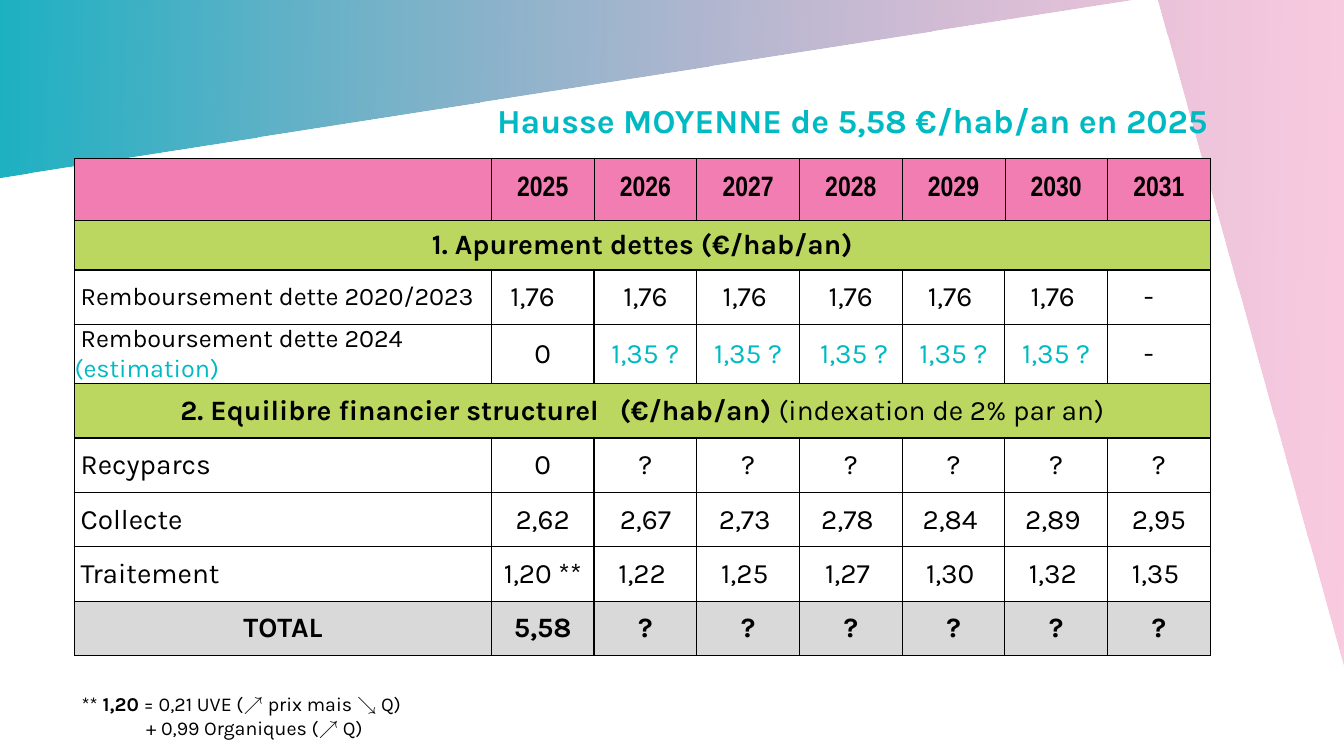
from dataclasses import dataclass

from lxml import etree
from pptx import Presentation
from pptx.dml.color import RGBColor
from pptx.enum.text import MSO_ANCHOR, PP_ALIGN
from pptx.oxml.ns import qn
from pptx.util import Inches, Pt

LEFT, CENTER = PP_ALIGN.LEFT, PP_ALIGN.CENTER
MIDDLE = MSO_ANCHOR.MIDDLE
SLIDE_WIDTH, SLIDE_HEIGHT = Inches(13.33), Inches(7.5)


@dataclass(frozen=True)
class Theme:
    """Colours, fonts and type sizes of the slide."""
    pink: str = "F27DB2"
    teal: str = "1DB2C3"
    accent: str = "00BAC3"
    green: str = "BCD75F"
    grey: str = "D9D9D9"
    black: str = "000000"
    body_font: str = "Karla"
    year_font: str = "Arial Narrow"
    title_size: int = 24
    value_size: int = 20
    label_size: int = 18
    note_size: int = 14


THEME = Theme()
YEARS = [str(year) for year in range(2025, 2032)]
DEBT_SECTION = [("1. Apurement dettes (€/hab/an)", True)]
BALANCE_SECTION = [("2. Equilibre financier structurel", True), (" ", True),
                   ("(€/hab/an) ", True), ("(indexation de 2% par an)", False)]
DEBT_ROWS = [
    ("Remboursement dette 2020/2023",
     ["1,76", "1,76", "1,76 ", "1,76", "1,76 ", "1,76 ", "-"]),
    ("Remboursement dette 2024 ",
     ["0", "1,35 ?", "1,35 ?", " 1,35 ?", "1,35 ?", "1,35 ?", "-"]),
]
BALANCE_ROWS = [
    ("Recyparcs", ["0"] + ["?"] * 6),
    ("Collecte", ["2,62", "2,67", "2,73 ", "2,78 ", "2,84 ", "2,89 ", "2,95"]),
    ("Traitement", ["1,20 **", "1,22 ", "1,25 ", "1,27 ", "1,30 ", "1,32 ", "1,35 "]),
]
TOTALS = ["TOTAL", "5,58"] + ["?"] * 6
ROW_HEIGHTS = [0.62, 0.49] + [0.54] * 7
COLUMN_WIDTHS = [4.14] + [1.02] * 7
LABEL_INDENT, VALUE_SHIFT = Inches(0.06), Inches(0.2)


def share_box(left, top, width, height):
    """Turn percentages of the slide's size into a box."""
    return (int(SLIDE_WIDTH * left / 100), int(SLIDE_HEIGHT * top / 100),
            int(SLIDE_WIDTH * width / 100), int(SLIDE_HEIGHT * height / 100))


def set_font(paragraph, size, bold=False, color=THEME.black, name=THEME.body_font):
    """Format a whole paragraph."""
    font = paragraph.font
    font.size, font.bold, font.name = Pt(size), bold, name
    font.color.rgb = RGBColor.from_string(color)


def add_backdrop(slide, box):
    """Draw the gradient band across the top and down the right side."""
    left, top, width, height = box
    right = left + width
    builder = slide.shapes.build_freeform(left, top)
    builder.add_line_segments([
        (left, top + int(height * 0.27)), (left + int(width * 0.86), top),
        (right, top + height), (right, top)])
    band = builder.convert_to_shape()
    band.shadow.inherit = False
    band.line.fill.background()
    band.fill.gradient()
    band.fill.gradient_angle = 179
    for stop, color in zip(band.fill.gradient_stops, (THEME.pink, THEME.teal)):
        stop.color.rgb = RGBColor.from_string(color)
    pink_color = next(band._element.iter(qn("a:srgbClr")))
    etree.SubElement(pink_color, qn("a:alpha"), val="40000")


def add_title(slide, box):
    """Place the headline in the title placeholder."""
    title = slide.shapes.title
    title.left, title.top, title.width, title.height = box
    title.text_frame.text = "Hausse MOYENNE de 5,58 €/hab/an en 2025"
    title.text_frame.vertical_anchor = MIDDLE
    paragraph = title.text_frame.paragraphs[0]
    paragraph.alignment = LEFT
    set_font(paragraph, THEME.title_size, True, THEME.accent)
    slide.shapes._spTree.append(title._element)


def style_cell(cell, fill=None, side_width=1, top_width=1, bottom_width=1):
    """Set the fill, margins and borders of a cell."""
    cell.margin_left = cell.margin_right = cell.margin_top = cell.margin_bottom = 0
    cell.vertical_anchor = MIDDLE
    if fill:
        cell.fill.solid()
        cell.fill.fore_color.rgb = RGBColor.from_string(fill)
    else:
        cell.fill.background()
    properties = cell._tc.get_or_add_tcPr()
    widths = {"a:lnL": side_width, "a:lnR": side_width,
              "a:lnT": top_width, "a:lnB": bottom_width}
    for position, (tag, width) in enumerate(widths.items()):
        line = etree.Element(qn(tag), w=str(Pt(width)))
        solid = etree.SubElement(line, qn("a:solidFill"))
        etree.SubElement(solid, qn("a:srgbClr"), val=THEME.black)
        properties.insert(position, line)


def write_cell(cell, text, size=THEME.value_size, align=CENTER, **font):
    """Write one formatted paragraph into a cell."""
    paragraph = cell.text_frame.paragraphs[0]
    paragraph.text = text
    paragraph.alignment = align
    set_font(paragraph, size, **font)
    return paragraph


def fill_section(table, row, runs, top_width):
    """Fill a green heading row that spans the table."""
    for cell in table.rows[row].cells:
        style_cell(cell, THEME.green, 0.5, top_width)
    heading = table.cell(row, 0)
    heading.merge(table.cell(row, len(YEARS)))
    paragraph = write_cell(heading, "")
    for text, bold in runs:
        run = paragraph.add_run()
        run.text, run.font.bold = text, bold
        if text == " ":
            run._r.get_or_add_rPr().set("spc", "960")


def fill_values(table, row, label, values, label_size):
    """Fill a row with its label and yearly amounts."""
    cells = list(table.rows[row].cells)
    for cell in cells:
        style_cell(cell)
    paragraph = write_cell(cells[0], label, label_size, LEFT)
    paragraph._p.get_or_add_pPr().set("indent", str(LABEL_INDENT))
    for cell, value in zip(cells[1:], values):
        color = THEME.accent if value.endswith(",35 ?") else THEME.black
        write_cell(cell, value, color=color)
        if value == "-":
            cell.margin_right = VALUE_SHIFT


def add_cost_table(slide, box):
    """Build the table of yearly costs per inhabitant."""
    left, top, width, height = box
    table = slide.shapes.add_table(len(ROW_HEIGHTS), len(COLUMN_WIDTHS), *box).table
    table.first_row = table.horz_banding = False
    for column, weight in zip(table.columns, COLUMN_WIDTHS):
        column.width = int(width * weight / sum(COLUMN_WIDTHS))
    for row, weight in zip(table.rows, ROW_HEIGHTS):
        row.height = int(height * weight / sum(ROW_HEIGHTS))

    for cell, year in zip(table.rows[0].cells, [""] + YEARS):
        style_cell(cell, THEME.pink, 0.5, 0.5, 0.5)
        write_cell(cell, year, bold=True, name=THEME.year_font)
    fill_section(table, 1, DEBT_SECTION, 0.5)
    for row, (label, values) in enumerate(DEBT_ROWS, 2):
        fill_values(table, row, label, values, THEME.label_size)
    table.cell(2, 1).margin_right = VALUE_SHIFT
    estimate = table.cell(3, 0).text_frame.paragraphs[0].add_run()
    estimate.text = "(estimation)"
    estimate.font.color.rgb = RGBColor.from_string(THEME.accent)
    fill_section(table, 4, BALANCE_SECTION, 1)
    for row, (label, values) in enumerate(BALANCE_ROWS, 5):
        fill_values(table, row, label, values, THEME.value_size)
    for cell, total in zip(table.rows[8].cells, TOTALS):
        style_cell(cell, THEME.grey)
        write_cell(cell, total, bold=True)


def add_footnote(slide, box):
    """Explain the treatment cost under the table."""
    frame = slide.shapes.add_textbox(*box).text_frame
    frame.word_wrap = True
    first, second = frame.paragraphs[0], frame.add_paragraph()
    for text, bold in [("**", False), (" 1,20", True),
                       (" = 0,21 UVE (↗ prix mais ↘ Q)", False)]:
        run = first.add_run()
        run.text, run.font.bold = text, bold
    second.text = "+ 0,99 Organiques (↗ Q)"
    second._p.get_or_add_pPr().set("marL", str(Inches(0.64)))
    for paragraph in frame.paragraphs:
        set_font(paragraph, THEME.note_size)


def main():
    """Build and save the slide."""
    presentation = Presentation()
    presentation.slide_width, presentation.slide_height = SLIDE_WIDTH, SLIDE_HEIGHT
    slide = presentation.slides.add_slide(presentation.slide_layouts[5])
    add_backdrop(slide, share_box(0, -0.4, 100, 89))
    add_cost_table(slide, share_box(5.55, 20.93, 84.5, 65.2))
    add_title(slide, share_box(36.23, 12.53, 57.16, 6.67))
    add_footnote(slide, share_box(5.33, 90.93, 48.3, 7.6))
    presentation.save("out.pptx")


if __name__ == "__main__":
    main()
